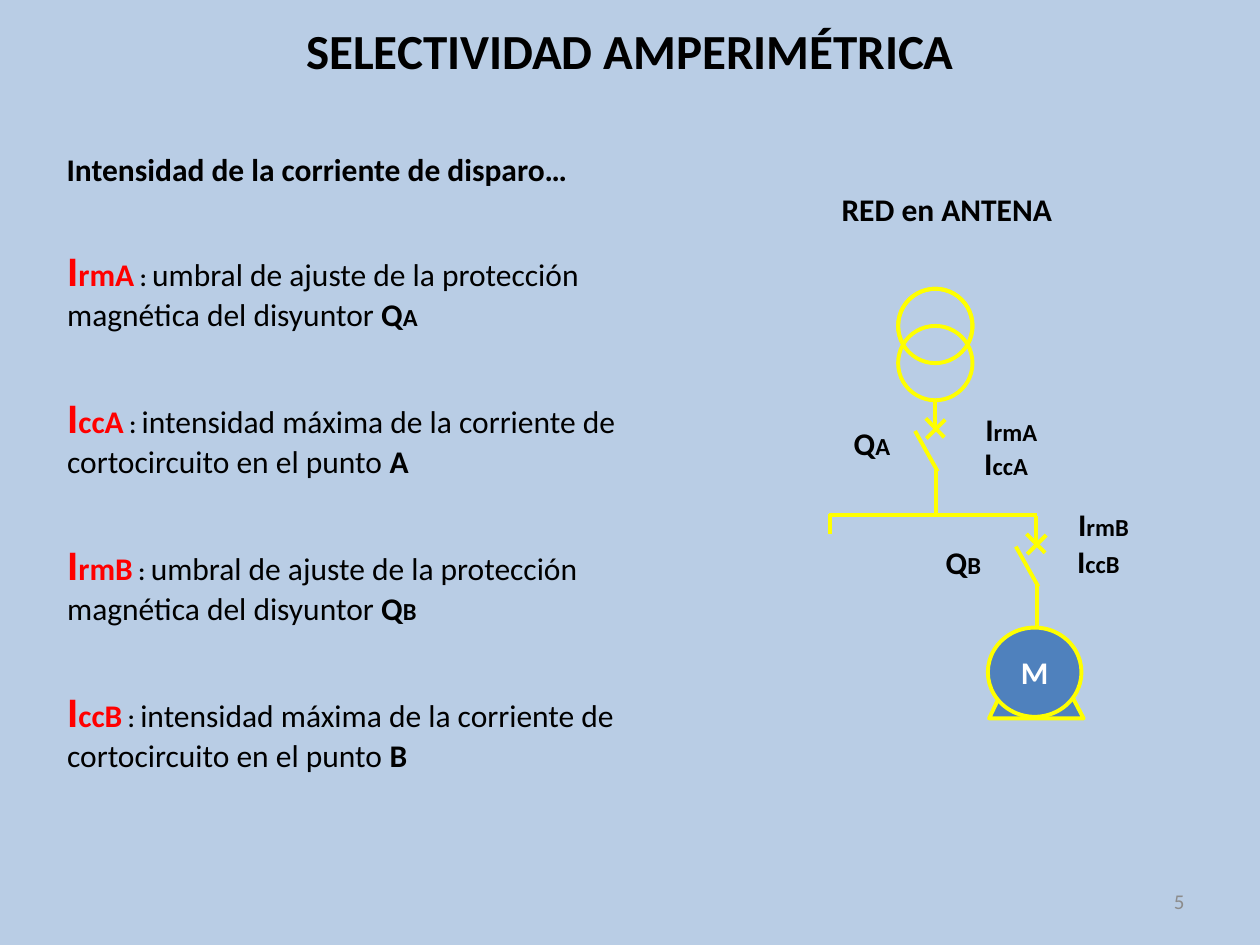
from pptx import Presentation
from pptx.dml.color import RGBColor
from pptx.enum.shapes import MSO_CONNECTOR, MSO_SHAPE
from pptx.enum.text import MSO_ANCHOR, PP_ALIGN
from pptx.oxml.ns import qn
from pptx.util import Pt
from lxml.etree import SubElement


class Theme:
    font = "Calibri"
    background = RGBColor(0xB9, 0xCD, 0xE5)
    motor = RGBColor(0x4F, 0x81, 0xBD)
    wire = RGBColor(0xFF, 0xFF, 0x00)
    ink = RGBColor(0, 0, 0)
    accent = RGBColor(0xFF, 0, 0)
    white = RGBColor(0xFF, 0xFF, 0xFF)
    grey = RGBColor(0x8C, 0x8C, 0x8C)
    title, symbol, body, subscript, number = 28, 24, 18, 14, 12
    wire_width = 2.25


# Content
TITLE = "SELECTIVIDAD AMPERIMÉTRICA"
INTRO = "Intensidad de la corriente de disparo…"
DIAGRAM_TITLE = "RED en ANTENA"
PAGE_NUMBER = "5"
THRESHOLD = "umbral de ajuste de la protección magnética del disyuntor "
SHORT_CIRCUIT = "intensidad máxima de la corriente de cortocircuito en el punto "

# Subscript, meaning, bold ending, its subscript
DEFINITIONS = [
    ("rmA", THRESHOLD, "Q", "A"),
    ("ccA", SHORT_CIRCUIT, "A", ""),
    ("rmB", THRESHOLD, "Q", "B"),
    ("ccB", SHORT_CIRCUIT, "B", ""),
]
DEFINITION_LEFT, DEFINITION_TOP, DEFINITION_STEP = 31.3, 136, 84

# Symbol, subscript, left, top, width, alignment
LABELS = [
    ("Q", "A", 474.5, 239, 47.5, PP_ALIGN.CENTER),
    ("Q", "B", 526.5, 306.5, 48, PP_ALIGN.CENTER),
    ("I", "rmA", 556, 231, 62.6, PP_ALIGN.LEFT),
    ("I", "ccA", 555.3, 250, 62.6, PP_ALIGN.LEFT),
    ("I", "rmB", 609, 285, 62.6, PP_ALIGN.LEFT),
    ("I", "ccB", 608.4, 306, 62.6, PP_ALIGN.LEFT),
]

# Diagram: start of each breaker, and its lines measured from there
BREAKERS = [(534.4, 229), (592, 295)]
BREAKER_LINES = [
    (0, 0, 0, 17.3),            # upper stem
    (-5.4, 10.1, 5.2, 20.9),    # cross
    (5.8, 10.8, -5, 21.6),
    (-11.5, 17.3, 1.4, 40.3),   # open blade
    (0.7, 39.4, 0.7, 64),       # lower stem
]
BUSBAR_LINES = [(473.8, 294.5, 592.8, 294.5), (474.5, 293.5, 474.5, 305.3)]
MOTOR_BASE = [(570.2, 400), (565.2, 410.5), (619.2, 410.5), (613.5, 399.6), (569.5, 399.6)]
COIL_LEFT, COIL_TOP, COIL_SIZE = 513.2, 165, 42.5

presentation = Presentation()
presentation.slide_width, presentation.slide_height = Pt(720), Pt(540)
slide = presentation.slides.add_slide(presentation.slide_layouts[5])
slide.background.fill.solid()
slide.background.fill.fore_color.rgb = Theme.background


def write(shape, parts, align=PP_ALIGN.LEFT, anchor=MSO_ANCHOR.TOP, wrap=True):
    """Fill a shape with one paragraph of (text, size, color, bold) runs."""
    frame = shape.text_frame
    frame.word_wrap, frame.vertical_anchor = wrap, anchor
    paragraph = frame.paragraphs[0]
    paragraph.alignment = align
    for text, size, color, bold in parts:
        run = paragraph.add_run()
        run.text = text
        run.font.name, run.font.size, run.font.bold = Theme.font, Pt(size), bold
        run.font.color.rgb = color


def add_text(left, top, width, height, parts, **options):
    box = slide.shapes.add_textbox(Pt(left), Pt(top), Pt(width), Pt(height))
    write(box, parts, **options)


def paint(shape, fill):
    shape.shadow.inherit = False
    if fill is None:
        shape.fill.background()
    else:
        shape.fill.solid()
        shape.fill.fore_color.rgb = fill
    shape.line.color.rgb, shape.line.width = Theme.wire, Pt(Theme.wire_width)


def add_circle(left, top, width, height, fill):
    circle = slide.shapes.add_shape(MSO_SHAPE.OVAL, Pt(left), Pt(top), Pt(width), Pt(height))
    paint(circle, fill)
    return circle


def add_wire(x1, y1, x2, y2):
    wire = slide.shapes.add_connector(MSO_CONNECTOR.STRAIGHT, Pt(x1), Pt(y1), Pt(x2), Pt(y2))
    wire.line.color.rgb, wire.line.width = Theme.wire, Pt(Theme.wire_width)
    SubElement(wire._element.spPr, qn("a:effectLst"))


# Motor base, behind the motor
base_points = [(Pt(x), Pt(y)) for x, y in MOTOR_BASE]
builder = slide.shapes.build_freeform(*base_points[0])
builder.add_line_segments(base_points[1:], close=False)
paint(builder.convert_to_shape(), Theme.motor)

# Transformer: two filled coils, then the upper outline again on top
for step, fill in [(0, Theme.background), (0.5, Theme.background), (0, None)]:
    add_circle(COIL_LEFT, COIL_TOP + step * COIL_SIZE, COIL_SIZE, COIL_SIZE, fill)

# Breakers and busbar
for x, y in BREAKERS:
    for x1, y1, x2, y2 in BREAKER_LINES:
        add_wire(x + x1, y + y1, x + x2, y + y2)
for line in BUSBAR_LINES:
    add_wire(*line)

# Motor
motor = add_circle(564.5, 358.6, 53.5, 51, Theme.motor)
write(motor, [("M", Theme.body, Theme.white, True)],
      align=PP_ALIGN.CENTER, anchor=MSO_ANCHOR.MIDDLE, wrap=False)

# Diagram labels
for symbol, subscript, left, top, width, align in LABELS:
    add_text(left, top, width, 29, [
        (symbol, Theme.body, Theme.ink, True),
        (subscript, Theme.subscript, Theme.ink, True),
    ], align=align)
add_text(473.8, 105, 224, 29, [(DIAGRAM_TITLE, Theme.body, Theme.ink, True)])

# Definitions
for index, (subscript, meaning, ending, ending_subscript) in enumerate(DEFINITIONS):
    parts = [
        ("I", Theme.symbol, Theme.accent, True),
        (subscript, Theme.body, Theme.accent, True),
        (" : ", Theme.subscript, Theme.ink, True),
        (meaning, Theme.body, Theme.ink, False),
        (ending, Theme.body, Theme.ink, True),
    ]
    if ending_subscript:
        parts.append((ending_subscript, Theme.subscript, Theme.ink, True))
    add_text(DEFINITION_LEFT, DEFINITION_TOP + index * DEFINITION_STEP, 358, 58.2, parts)

# Title, page number and introduction
title = slide.shapes.title
title.left, title.top, title.width, title.height = Pt(0), Pt(0), Pt(720), Pt(57)
write(title, [(TITLE, Theme.title, Theme.ink, True)],
      align=PP_ALIGN.CENTER, anchor=MSO_ANCHOR.MIDDLE)
add_text(516, 500.5, 168, 28.8, [(PAGE_NUMBER, Theme.number, Theme.grey, False)],
         align=PP_ALIGN.RIGHT, anchor=MSO_ANCHOR.MIDDLE)
add_text(31, 82, 302.4, 29, [(INTRO, Theme.body, Theme.ink, True)], wrap=False)

presentation.save("out.pptx")
